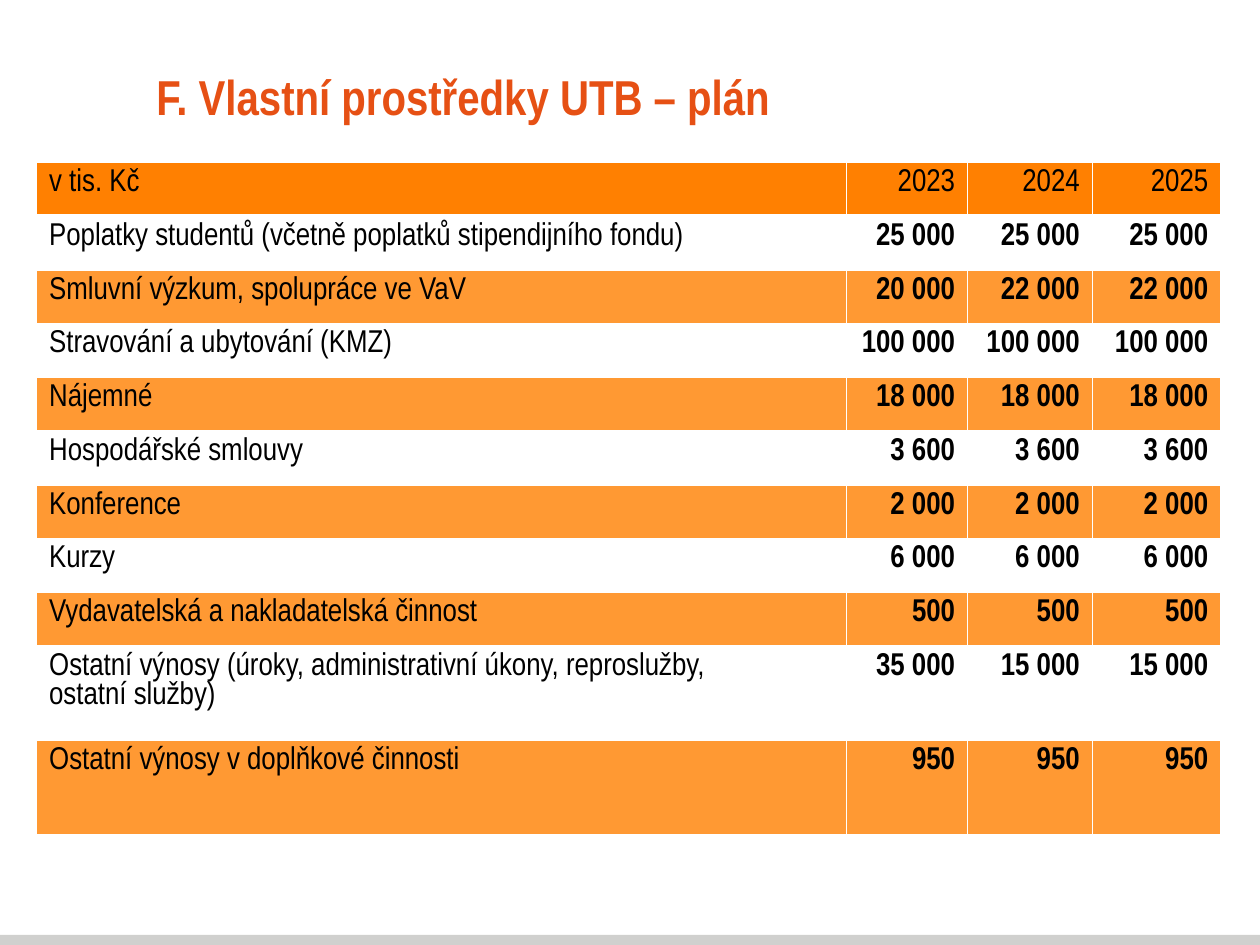
from dataclasses import dataclass
from typing import NamedTuple

from lxml.etree import SubElement
from pptx import Presentation
from pptx.dml.color import RGBColor
from pptx.enum.shapes import MSO_SHAPE
from pptx.enum.text import MSO_ANCHOR, PP_ALIGN
from pptx.oxml.ns import qn
from pptx.util import Inches, Pt


@dataclass(frozen=True)
class Theme:
    face: str = "Arial Narrow"
    title: str = "E65014"
    head: str = "FF8001"
    band: str = "FF9933"
    plain: str = "FFFFFF"
    ink: str = "000000"
    foot: str = "D0D0CE"
    large: int = 28
    body: int = 18


class Row(NamedTuple):
    label: str
    sums: tuple[str, ...]


THEME = Theme()
WIDE, HIGH = 10, 7.5
LEFT, TOP, TALL = 0.29, 1.29, 5.34
COLS = (6.43, 0.96, 0.99, 1.02)
LAST = 0.75
HEAD = Row("v tis. Kč", ("2023", "2024", "2025"))
ROWS = (
    Row("Poplatky studentů (včetně poplatků stipendijního fondu)", ("25 000",) * 3),
    Row("Smluvní výzkum, spolupráce ve VaV", ("20 000", "22 000", "22 000")),
    Row("Stravování a ubytování (KMZ)", ("100 000",) * 3),
    Row("Nájemné", ("18 000",) * 3),
    Row("Hospodářské smlouvy", ("3 600",) * 3),
    Row("Konference", ("2 000",) * 3),
    Row("Kurzy", ("6 000",) * 3),
    Row("Vydavatelská a nakladatelská činnost", ("500",) * 3),
    Row("Ostatní výnosy (úroky, administrativní úkony, reproslužby,\nostatní služby)",
        ("35 000", "15 000", "15 000")),
    Row("Ostatní výnosy v doplňkové činnosti", ("950",) * 3),
)


def set_font(para, size: int, tint: str, bold: bool) -> None:
    font = para.font
    font.name, font.size, font.bold = THEME.face, Pt(size), bold
    font.color.rgb = RGBColor.from_string(tint)


def add_edge(cell, side: str, width: float) -> None:
    line = SubElement(cell._tc.get_or_add_tcPr(), qn(f"a:{side}"), w=str(Pt(width)))
    fill = SubElement(line, qn("a:solidFill"))
    SubElement(fill, qn("a:srgbClr"), val=THEME.plain)


def fill_cell(cell, text: str, tint: str, right: bool, bold: bool, base: float) -> None:
    for side in ("lnL", "lnR", "lnT"):
        add_edge(cell, side, 1)
    add_edge(cell, "lnB", base)
    cell.fill.solid()
    cell.fill.fore_color.rgb = RGBColor.from_string(tint)
    cell.text = text
    for para in cell.text_frame.paragraphs:
        para.alignment = PP_ALIGN.RIGHT if right else PP_ALIGN.LEFT
        set_font(para, THEME.body, THEME.ink, bold)


def add_plan(slide) -> None:
    rows = (HEAD, *ROWS)
    frame = slide.shapes.add_table(len(rows), len(COLS), Inches(LEFT), Inches(TOP),
                                   Inches(sum(COLS)), Inches(TALL))
    table = frame.table
    for col, width in zip(table.columns, COLS):
        col.width = Inches(width)
    step = (TALL - 2 * LAST) / (len(rows) - 2)
    for num, row in enumerate(rows):
        table.rows[num].height = Inches(step if num < len(rows) - 2 else LAST)
        top = num == 0
        tint = THEME.head if top else THEME.plain if num % 2 else THEME.band
        for col, text in enumerate((row.label, *row.sums)):
            fill_cell(table.cell(num, col), text, tint, col > 0,
                      col > 0 and not top, 3 if top else 1)


def add_title(slide, text: str) -> None:
    title = slide.shapes.title
    title.left, title.top = Inches(1.14), Inches(0.36)
    title.width, title.height = Inches(8.11), Inches(0.81)
    title.text_frame.text = text
    title.text_frame.vertical_anchor = MSO_ANCHOR.MIDDLE
    para = title.text_frame.paragraphs[0]
    para.alignment = PP_ALIGN.LEFT
    props = para._p.get_or_add_pPr()
    props.set("marL", str(Inches(0.2)))
    props.set("indent", str(Inches(-0.2)))
    set_font(para, THEME.large, THEME.title, True)


def add_foot(slide) -> None:
    high = 0.08
    bar = slide.shapes.add_shape(MSO_SHAPE.RECTANGLE, 0, Inches(HIGH - high),
                                 Inches(WIDE), Inches(high))
    bar.shadow.inherit = False
    bar.fill.solid()
    bar.fill.fore_color.rgb = RGBColor.from_string(THEME.foot)
    bar.line.fill.background()


def main() -> None:
    """Build the slide with the plan of the university's own funds."""
    deck = Presentation()
    deck.slide_width, deck.slide_height = Inches(WIDE), Inches(HIGH)
    slide = deck.slides.add_slide(deck.slide_layouts[5])
    add_foot(slide)
    add_title(slide, "F. Vlastní prostředky UTB – plán")
    add_plan(slide)
    deck.save("out.pptx")


if __name__ == "__main__":
    main()
